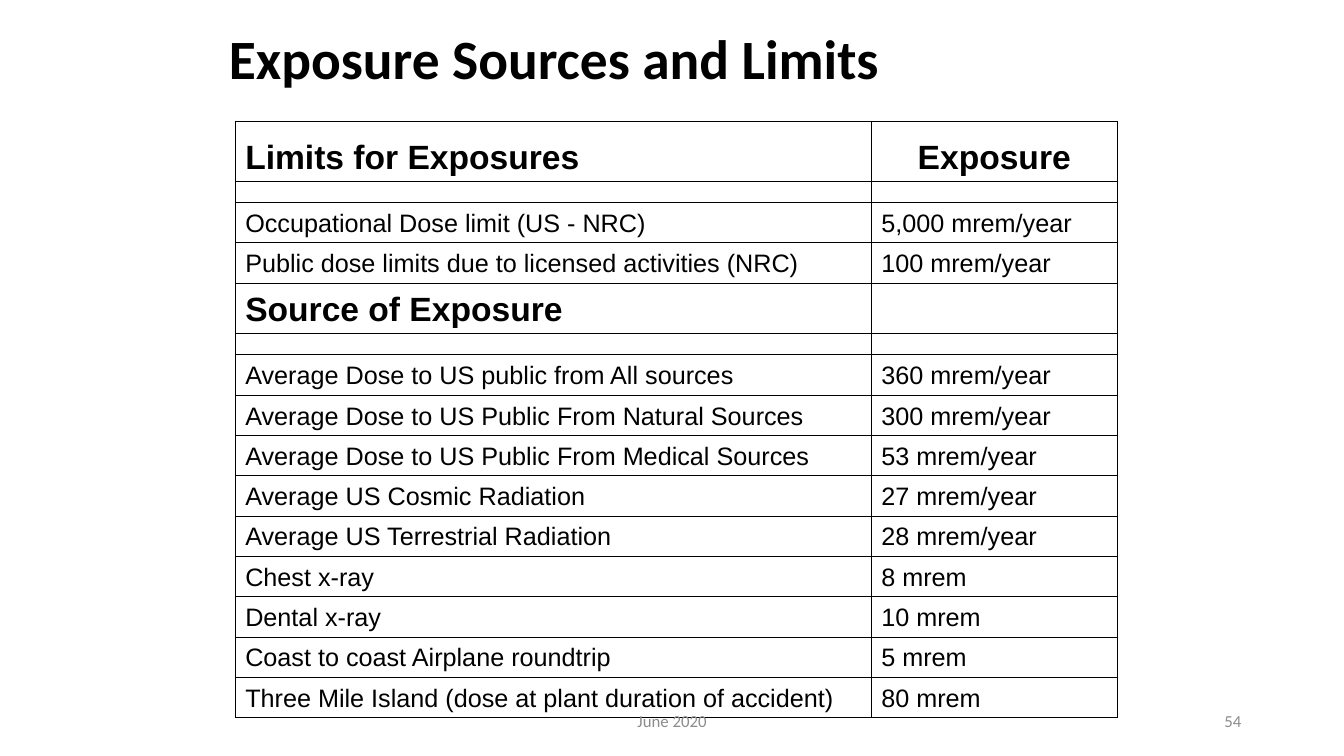
from lxml.etree import SubElement as Sub
from pptx import Presentation as Deck
from pptx.dml.color import RGBColor as Rgb
from pptx.enum.text import MSO_ANCHOR as Anchor, PP_ALIGN as Align
from pptx.oxml.ns import qn
from pptx.util import Inches, Pt

WIDE, HIGH = Inches(13.333), Inches(7.5)
INK = {"text": "000000", "foot": "8C8C8C"}
COLS = (6.31, 2.44)
HEAD, ITEM, GAP = 24, 18, 6
ROWS = [
    (0.6, HEAD, "Limits for Exposures", "Exposure"),
    (0.21, GAP, "", ""),
    (0.4, ITEM, "Occupational Dose limit (US - NRC)", "5,000 mrem/year"),
    (0.4, ITEM, "Public dose limits due to licensed activities (NRC)", "100 mrem/year"),
    (0.5, HEAD, "Source of Exposure", ""),
    (0.21, GAP, "", ""),
    (0.4, ITEM, "Average Dose to US public from All sources", "360 mrem/year"),
    (0.4, ITEM, "Average Dose to US Public From Natural Sources", "300 mrem/year"),
    (0.4, ITEM, "Average Dose to US Public From Medical Sources", "53 mrem/year"),
    (0.4, ITEM, "Average US Cosmic Radiation", "27 mrem/year"),
    (0.4, ITEM, "Average US Terrestrial Radiation", "28 mrem/year"),
    (0.4, ITEM, "Chest x-ray", "8 mrem"),
    (0.4, ITEM, "Dental x-ray", "10 mrem"),
    (0.4, ITEM, "Coast to coast Airplane roundtrip", "5 mrem"),
    (0.4, ITEM, "Three Mile Island (dose at plant duration of accident)", "80 mrem"),
]


def style(para, size, face, ink, bold, align):
    """Format a paragraph and its runs."""
    para.alignment = align
    for run in para.runs:
        font = run.font
        font.size, font.name, font.bold = Pt(size), face, bold
        font.color.rgb = Rgb.from_string(INK[ink])


def label(slide, text, left, top, width, height, size, ink="foot",
          bold=False, align=Align.LEFT):
    """Add a text box placed by shares of the slide size."""
    box = slide.shapes.add_textbox(int(left * WIDE), int(top * HIGH),
                                   int(width * WIDE), int(height * HIGH))
    frame = box.text_frame
    frame.text = text
    frame.word_wrap = True
    frame.vertical_anchor = Anchor.MIDDLE
    style(frame.paragraphs[0], size, "Calibri", ink, bold, align)
    return frame.paragraphs[0]


def frame_cell(cell):
    """Draw thin lines on all four sides of a cell."""
    props = cell._tc.get_or_add_tcPr()
    for spot, side in enumerate(("a:lnL", "a:lnR", "a:lnT", "a:lnB")):
        line = props.makeelement(qn(side), {"w": str(Pt(0.75))})
        fill = Sub(line, qn("a:solidFill"))
        Sub(fill, qn("a:srgbClr"), val=INK["text"])
        props.insert(spot, line)


def fill_cell(cell, text, size, align):
    """Write one cell and set its look."""
    cell.fill.background()
    frame_cell(cell)
    cell.vertical_anchor = Anchor.BOTTOM
    cell.text_frame.text = text
    para = cell.text_frame.paragraphs[0]
    style(para, size, "Arial", "text", size == HEAD, align)
    if not text:
        Sub(para._p, qn("a:endParaRPr"), sz=str(GAP * 100))


def dose_table(slide, left, top):
    """Add the table of limits and sources."""
    high = sum(row[0] for row in ROWS)
    grid = slide.shapes.add_table(len(ROWS), len(COLS), int(left * WIDE),
                                  int(top * HIGH), Inches(sum(COLS)),
                                  Inches(high)).table
    grid.first_row = grid.horz_banding = False
    for col, width in zip(grid.columns, COLS):
        col.width = Inches(width)
    for y, (height, size, *texts) in enumerate(ROWS):
        grid.rows[y].height = Inches(height)
        for x, text in enumerate(texts):
            mid = size == HEAD and x == 1
            fill_cell(grid.cell(y, x), text, size,
                      Align.CENTER if mid else Align.LEFT)


def main():
    """Build and save the slide."""
    deck = Deck()
    deck.slide_width, deck.slide_height = WIDE, HIGH
    slide = deck.slides.add_slide(deck.slide_layouts[6])
    dose_table(slide, 0.175, 0.16)
    title = label(slide, "Exposure Sources and Limits", 0.163, 0.04, 0.675,
                  0.083, 39.6, "text", True)
    title.line_spacing = 0.9
    foot = 0.927
    label(slide, "June 2020", 0.331, foot, 0.338, 0.053, 12, align=Align.CENTER)
    label(slide, "54", 0.706, foot, 0.225, 0.053, 12, align=Align.RIGHT)
    deck.save("out.pptx")


if __name__ == "__main__":
    main()
